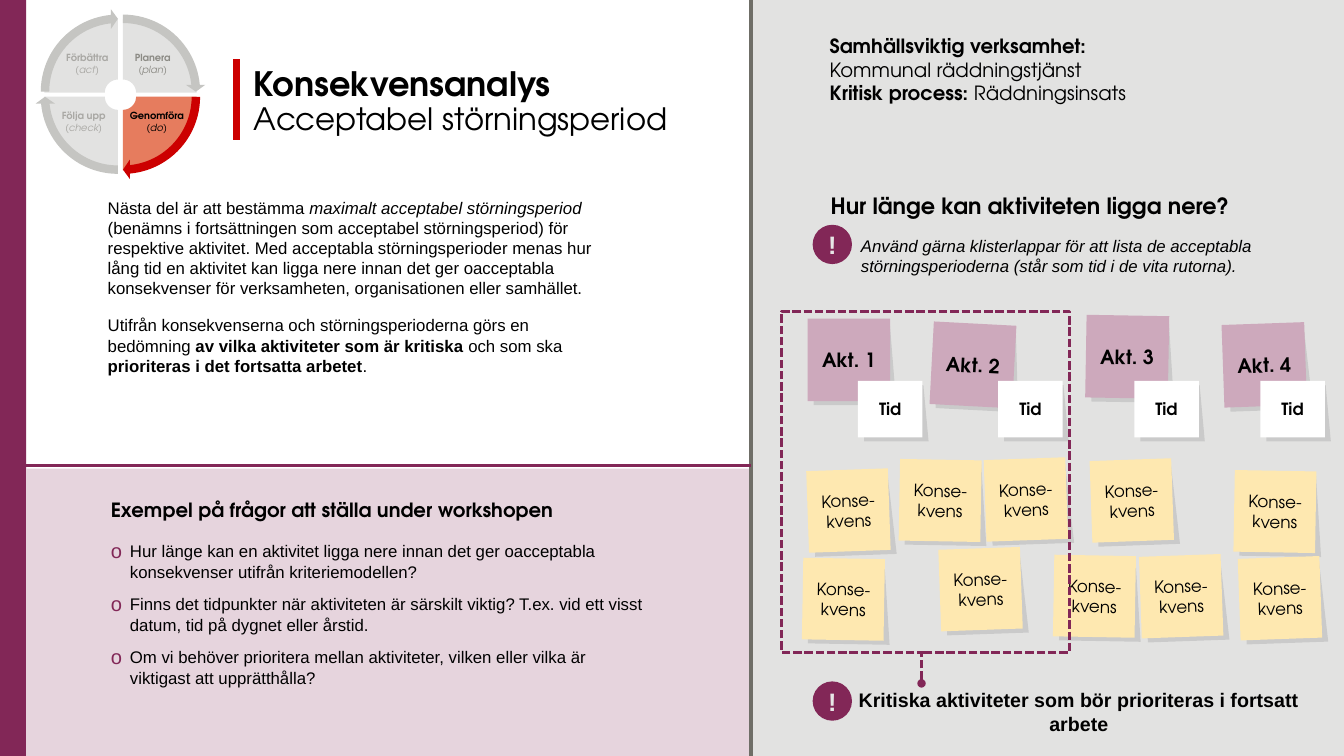
import math
from lxml import etree
from pptx import Presentation
from pptx.dml import color
from pptx.enum import dml, shapes, text
from pptx.oxml import ns
from pptx.util import Inches, Pt

COLORS = {
    "plum": "822757", "rose": "E6D4DD", "grey": "E2E2E1", "white": "FFFFFF",
    "black": "000000", "red": "CC0000", "divider": "6F6E67", "activity": "CDA9BC",
    "consequence": "FEE8B0", "active": "E67C5E", "arrow": "C5C5C2",
    "badge": "E7E6E6", "faded": "A9A8A4", "dimmed": "8C8B85",
}
HEADING = {"name": "TeX Gyre Adventor", "size": Pt(14), "bold": True}
BODY = {"name": "Arial", "size": Pt(12), "bold": False}
CENTER = {"alignment": text.PP_ALIGN.CENTER}
AFTER = {"space_after": Pt(12)}
BOLD, PLAIN, ITALIC = {"bold": True}, {"bold": False}, {"italic": True}
CONSEQUENCES = [
    (10.82, 4.56, -2), (10.45, 5.51, 1), (11.31, 5.51, -2), (12.24, 4.67, 1),
    (12.29, 5.53, -2), (8.92, 4.56, 1), (9.77, 4.55, -2), (9.32, 5.44, -2),
    (8.01, 4.66, -2), (7.96, 5.54, 1),
]


def rgb(name):
    return color.RGBColor.from_string(COLORS[name])


def apply(target, values):
    for key, value in values.items():
        setattr(target, key, value)


def add_child(parent, tag, **attributes):
    child = etree.SubElement(parent, ns.qn(tag))
    for key, value in attributes.items():
        child.set(key, value)
    return child


def paint(part, fill):
    part.shadow.inherit = False
    part.fill.solid()
    part.fill.fore_color.rgb = rgb(fill)
    part.line.fill.background()
    return part


def add_block(parent, preset, box, fill):
    return paint(parent.add_shape(preset, *map(Inches, box)), fill)


def add_outline(parent, points, fill):
    corners = [(Inches(x), Inches(y)) for x, y in points]
    builder = parent.build_freeform(*corners[0])
    builder.add_line_segments(corners[1:], close=True)
    return paint(builder.convert_to_shape(), fill)


def add_bullet(paragraph):
    properties = paragraph._p.get_or_add_pPr()
    properties.set("marL", str(Inches(0.19)))
    properties.set("indent", str(-Inches(0.19)))
    bullet_color = add_child(properties, "a:buClr")
    add_child(bullet_color, "a:srgbClr", val=COLORS["plum"])
    add_child(properties, "a:buSzPct", val="120000")
    add_child(properties, "a:buFont", typeface="Arial")
    add_child(properties, "a:buChar", char="o")


def write(frame, paragraphs, font, layout=None, ink="black", bulleted=False):
    for index, runs in enumerate(paragraphs):
        paragraph = frame.paragraphs[0] if index == 0 else frame.add_paragraph()
        apply(paragraph, layout or {})
        if bulleted:
            add_bullet(paragraph)
        for words, change in runs:
            for number, line in enumerate(words.split("\n")):
                if number:
                    paragraph.add_line_break()
                if line:
                    run = paragraph.add_run()
                    run.text = line
                    apply(run.font, {**font, **change})
                    run.font.color.rgb = rgb(ink)


def add_words(parent, box, paragraphs, font, layout=None, ink="black", wrap=True, bulleted=False):
    frame = parent.add_textbox(*map(Inches, box)).text_frame
    apply(frame, {"word_wrap": wrap, "auto_size": text.MSO_AUTO_SIZE.SHAPE_TO_FIT_TEXT})
    write(frame, paragraphs, font, layout, ink, bulleted)


def add_label(part, words, font, insets, ink="black"):
    sides = ("margin_left", "margin_top", "margin_right", "margin_bottom")
    apply(part.text_frame, dict(zip(sides, map(Inches, insets))))
    part.text_frame.vertical_anchor = text.MSO_ANCHOR.MIDDLE
    write(part.text_frame, [[(words, {})]], font, CENTER, ink)


def add_note(parent, box, turn, fill, words, font, insets):
    left, top, width, height = box
    note = parent.add_group_shape().shapes
    x, y = left + 0.06, top + 0.04
    shade = add_outline(note, [(x, y), (x + 0.92 * width, y), (x + width, y + height),
                               (x, y + height)], "black")
    tint = shade._element.spPr.find(".//" + ns.qn("a:srgbClr"))
    add_child(tint, "a:alpha", val="10000")
    paper = add_block(note, shapes.MSO_SHAPE.RECTANGLE, box, fill)
    shade.rotation = paper.rotation = turn
    add_label(paper, words, font, insets)


def add_rule(parent, start, end, ink, width):
    rule = parent.add_connector(shapes.MSO_CONNECTOR.STRAIGHT, *map(Inches, start + end))
    rule.line.color.rgb = rgb(ink)
    rule.line.width = Pt(width)
    add_child(rule._element.spPr, "a:effectLst")
    return rule


def add_badge(parent, top):
    badge = add_block(parent, shapes.MSO_SHAPE.OVAL, (8.06, top, 0.39, 0.39), "plum")
    add_label(badge, "!", {**BODY, "size": Pt(18), "bold": True}, (0, 0, 0, 0), "badge")


def add_quadrant(parent, x, y, across, down, fill):
    turns = [math.radians(3 * step) for step in range(31)]
    rim = [(0.73, turn) for turn in turns] + [(0.13, turn) for turn in reversed(turns)]
    add_outline(parent, [(x + across * radius * math.cos(turn), y + down * radius * math.sin(turn))
                         for radius, turn in rim], fill)


def add_wheel(parent):
    wheel = parent.add_group_shape().shapes
    for x, across in ((1.17, -1), (1.22, 1)):
        for y, down in ((0.92, -1), (0.96, 1)):
            add_quadrant(wheel, x, y, across, down, "active" if across == down == 1 else "grey")
    arrows = [(3, 0.4, 0.09, "arrow"), (0, 0.4, 0.14, "red"),
              (1, 0.35, 0.14, "arrow"), (2, 0.35, 0.09, "arrow")]
    for quarter, left, top, fill in arrows:
        arrow = add_block(wheel, shapes.MSO_SHAPE.CIRCULAR_ARROW, (left, top, 1.64, 1.64), fill)
        bends = (0.051, 3.275, 50.725 + 54 * quarter, 54 * quarter, 0.059)
        for index, bend in enumerate(bends):
            arrow.adjustments[index] = bend
    phases = [("Förbättra", "(act)", 0.55, 0.48, 0.63, "faded"),
              ("Följa upp", "(check)", 0.51, 1.05, 0.64, "faded"),
              ("Genomföra", "(do)", 1.18, 1.05, 0.75, "black"),
              ("Planera", "(plan)", 1.15, 0.48, 0.73, "dimmed")]
    for phase, term, left, top, width, ink in phases:
        add_words(wheel, (left, top, width, 0.33), [[(phase, {})], [(term, {**PLAIN, **ITALIC})]],
                  {**HEADING, "size": Pt(7)},
                  {**CENTER, "line_spacing": 0.9, "space_after": Pt(1)}, ink, wrap=False)


def add_board(parent):
    for number, (left, top, turn) in enumerate(
            [(8.01, 3.16, 0), (9.24, 3.21, 3), (10.77, 3.13, 1), (12.13, 3.21, -2)], 1):
        add_note(parent, (left, top, 0.82, 0.82), turn, "activity", f"Akt. {number}",
                 HEADING, (0.1, 0.05, 0.1, 0.05))
    for left in (8.51, 9.9, 11.25, 12.5):
        add_note(parent, (left, 3.78, 0.64, 0.56), 0, "white", "Tid",
                 {**HEADING, "size": Pt(12)}, (0, 0, 0, 0))
    for left, top, turn in CONSEQUENCES:
        add_note(parent, (left, top, 0.81, 0.81), turn, "consequence", "Konse-\nkvens",
                 {**HEADING, "size": Pt(12), "bold": False}, (0, 0.05, 0, 0.05))
    critical = add_block(parent, shapes.MSO_SHAPE.RECTANGLE, (7.75, 3.09, 2.86, 3.38), "white")
    critical.fill.background()
    critical.line.color.rgb = rgb("plum")
    critical.line.width = Pt(2)
    pointer = add_rule(parent, (9.14, 6.78), (9.14, 6.47), "plum", 2)
    for edge in (critical, pointer):
        edge.line.dash_style = dml.MSO_LINE.SQUARE_DOT
    add_child(pointer.line._get_or_add_ln(), "a:headEnd", type="oval")


def add_left_side(parent):
    add_words(parent, (2.42, 0.62, 4.57, 0.8),
              [[("Konsekvensanalys\n", {}), ("Acceptabel störningsperiod", {"size": Pt(22), **PLAIN})]],
              {**HEADING, "size": Pt(24)}, {"line_spacing": 0.9})
    add_rule(parent, (2.35, 0.59), (2.35, 1.39), "red", 5)
    add_words(parent, (0.97, 1.91, 5.04, 1.88), [
        [("Nästa del är att bestämma ", {}), ("maximalt acceptabel störningsperiod ", ITALIC),
         ("(benämns i fortsättningen som acceptabel störningsperiod) för respektive aktivitet. "
          "Med acceptabla störningsperioder menas hur lång tid en aktivitet kan ligga nere innan "
          "det ger oacceptabla konsekvenser för verksamheten, organisationen eller samhället.", {})],
        [("Utifrån konsekvenserna och störningsperioderna görs en bedömning ", {}),
         ("av vilka aktiviteter som är kritiska ", BOLD), ("och som ska ", {}),
         ("prioriteras i det fortsatta arbetet", BOLD), (".", {})]], BODY, AFTER)
    add_words(parent, (1, 4.89, 4.65, 0.34),
              [[("Exempel på frågor att ställa under workshopen", {})]], HEADING, wrap=False)
    questions = [
        "Hur länge kan en aktivitet ligga nere innan det ger oacceptabla konsekvenser utifrån kriteriemodellen?",
        "Finns det tidpunkter när aktiviteten är särskilt viktig? T.ex. vid ett visst datum, tid på dygnet eller årstid.",
        "Om vi behöver prioritera mellan aktiviteter, vilken eller vilka är viktigast att upprätthålla?"]
    add_words(parent, (1, 5.32, 5.48, 1.57), [[(question, {})] for question in questions],
              BODY, {"space_after": Pt(9)}, bulleted=True)
    add_wheel(parent)


def add_right_side(parent):
    add_words(parent, (8.13, 0.29, 3.97, 0.81),
              [[("Samhällsviktig verksamhet:\n", {}), ("Kommunal räddningstjänst\n", PLAIN),
                ("Kritisk process: ", {}), ("Räddningsinsats", PLAIN)]], HEADING, AFTER)
    add_words(parent, (8.14, 1.86, 4.4, 0.37), [[("Hur länge kan aktiviteten ligga nere?", {})]],
              {**HEADING, "size": Pt(16)}, AFTER)
    add_words(parent, (8.44, 2.29, 4.51, 0.5),
              [[("Använd gärna klisterlappar för att lista de acceptabla störningsperioderna "
                 "(står som tid i de vita rutorna).", ITALIC)]], BODY, AFTER)
    add_board(parent)
    add_words(parent, (8.2, 6.78, 5, 0.57),
              [[("Kritiska aktiviteter som bör prioriteras i fortsatt arbete", BOLD)]],
              {**BODY, "size": Pt(14)}, {**CENTER, **AFTER})
    for top in (2.23, 6.76):
        add_badge(parent, top)


def main():
    deck = Presentation()
    apply(deck, {"slide_width": Inches(13.33), "slide_height": Inches(7.5)})
    parts = deck.slides.add_slide(deck.slide_layouts[6]).shapes
    for box, fill in [((0, 0, 0.26, 7.5), "plum"), ((7.45, 0, 5.88, 7.5), "grey"),
                      ((0.26, 4.65, 7.19, 2.85), "rose")]:
        add_block(parts, shapes.MSO_SHAPE.RECTANGLE, box, fill)
    add_rule(parts, (7.45, 0), (7.45, 7.5), "divider", 2.5)
    add_rule(parts, (0.26, 4.62), (7.45, 4.62), "plum", 2.5)
    add_left_side(parts)
    add_right_side(parts)
    deck.save("out.pptx")


if __name__ == "__main__":
    main()
